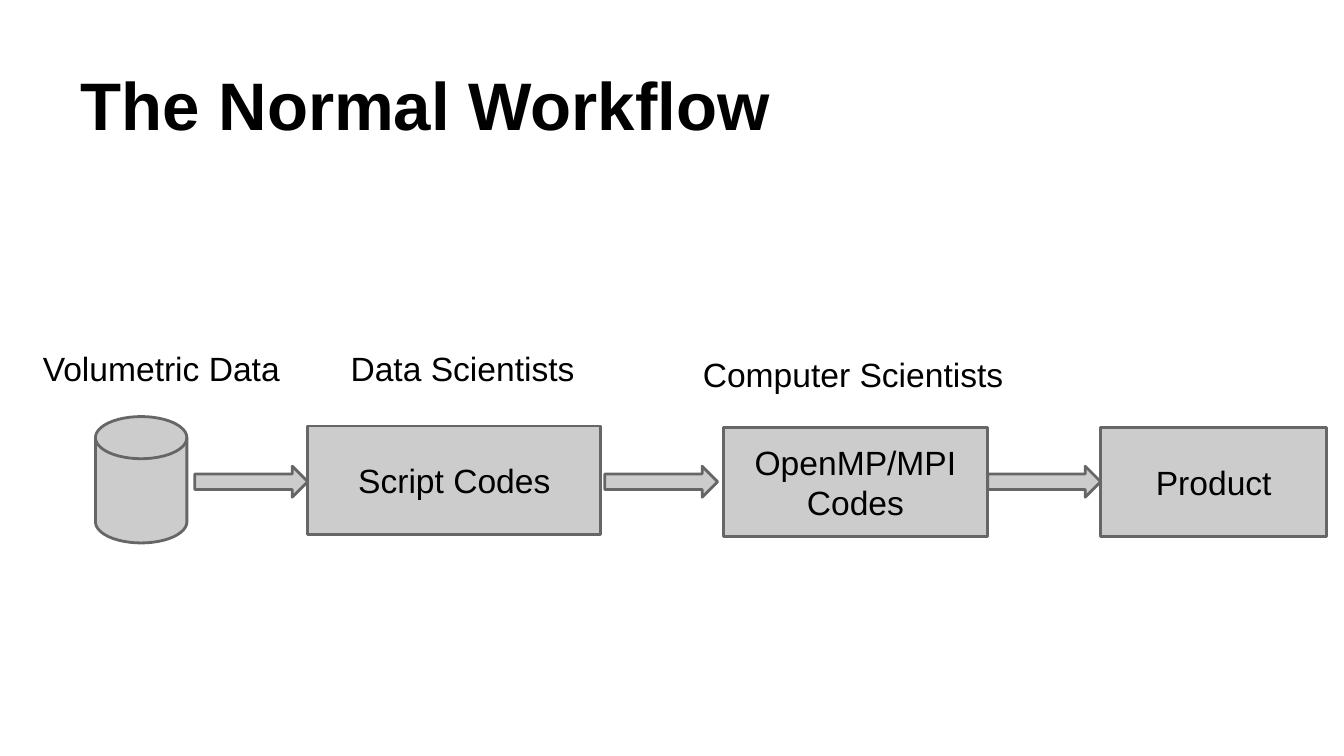
from pptx import Presentation
from pptx.dml.color import RGBColor
from pptx.enum.shapes import MSO_SHAPE as SHAPE
from pptx.enum.text import MSO_ANCHOR as ANCHOR, PP_ALIGN as ALIGN
from pptx.util import Pt

BLACK = RGBColor(0x00, 0x00, 0x00)
GREY = RGBColor(0xCC, 0xCC, 0xCC)
OUTLINE = RGBColor(0x66, 0x66, 0x66)

TITLE = "The Normal Workflow"
BOX_H = 58.3
ARROW_TOP, ARROW_W, ARROW_H = 249.8, 60.5, 16.6
DISK = (51.1, 223.2, 49, 67.7)
BOXES = [
    ("Script Codes", 164.9, 228.2, 157),
    ("OpenMP/MPI Codes", 387.4, 229, 141.8),
    ("Product", 589.7, 229, 121),
]
ARROW_LEFTS = [104.4, 324, 529.2]
LABELS = [
    ("Volumetric Data", (7.9, 179.3, 157, 46.1), ALIGN.CENTER),
    ("Data Scientists", (180.7, 179.3, 152.6, 36.7), ALIGN.LEFT),
    ("Computer Scientists", (369.4, 182.2, 178.6, 40.3), ALIGN.LEFT),
]


def write(sp, text, size=18, bold=False, align=ALIGN.CENTER, anchor=ANCHOR.MIDDLE):
    tf = sp.text_frame
    tf.word_wrap = True
    tf.vertical_anchor = anchor
    tf.margin_left = tf.margin_right = tf.margin_top = tf.margin_bottom = Pt(7.2)
    p = tf.paragraphs[0]
    p.alignment = align
    r = p.add_run()
    r.text = text
    r.font.name = "Arial"
    r.font.size = Pt(size)
    r.font.bold = bold
    r.font.color.rgb = BLACK


def add_block(slide, kind, *place):
    sp = slide.shapes.add_shape(kind, *map(Pt, place))
    sp.shadow.inherit = False
    sp.fill.solid()
    sp.fill.fore_color.rgb = GREY
    sp.line.color.rgb = OUTLINE
    sp.line.width = Pt(1.5)
    return sp


def main():
    prs = Presentation()
    prs.slide_width, prs.slide_height = Pt(720), Pt(405)
    slide = prs.slides.add_slide(prs.slide_layouts[5])

    title = slide.shapes.title
    title.left, title.top, title.width, title.height = map(Pt, (36, 16.6, 648, 67.7))
    write(title, TITLE, size=36, bold=True, align=ALIGN.LEFT, anchor=ANCHOR.BOTTOM)

    add_block(slide, SHAPE.FLOWCHART_MAGNETIC_DISK, *DISK)
    for left in ARROW_LEFTS:
        add_block(slide, SHAPE.RIGHT_ARROW, left, ARROW_TOP, ARROW_W, ARROW_H)
    for text, left, top, width in BOXES:
        write(add_block(slide, SHAPE.RECTANGLE, left, top, width, BOX_H), text)
    for text, place, align in LABELS:
        label = slide.shapes.add_textbox(*map(Pt, place))
        write(label, text, align=align, anchor=ANCHOR.TOP)

    prs.save("out.pptx")


if __name__ == "__main__":
    main()
